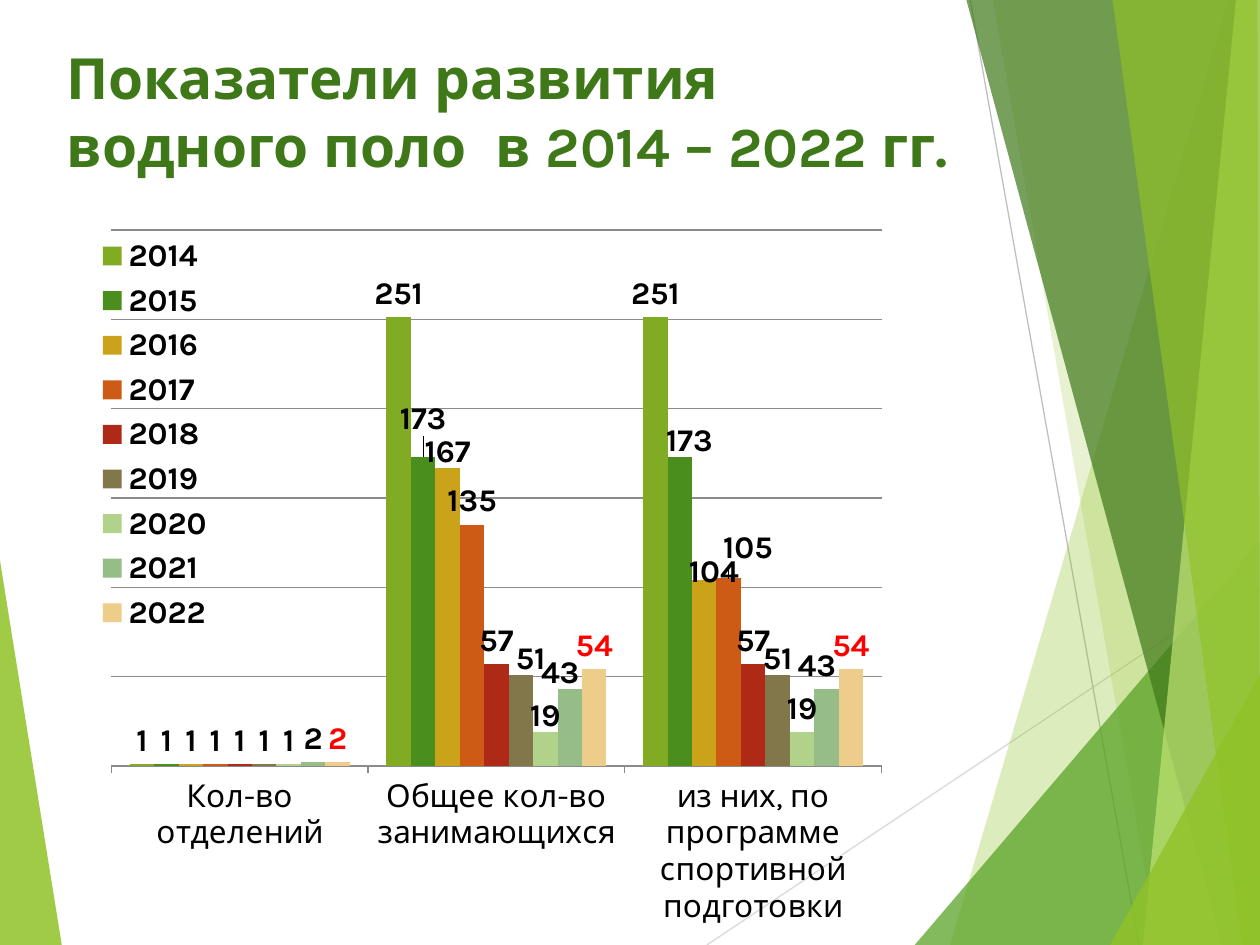
"""Build the water polo slide with its clustered column chart."""
from typing import NamedTuple

from lxml.etree import SubElement
from pptx import Presentation
from pptx.chart.chart import Chart
from pptx.chart.data import CategoryChartData
from pptx.dml.color import RGBColor
from pptx.enum.chart import (XL_CHART_TYPE, XL_LABEL_POSITION, XL_LEGEND_POSITION,
                             XL_TICK_LABEL_POSITION, XL_TICK_MARK)
from pptx.enum.shapes import MSO_CONNECTOR
from pptx.enum.text import MSO_ANCHOR
from pptx.oxml.ns import qn
from pptx.slide import Slide
from pptx.util import Inches, Pt

FONT = "Karla"
BLACK = RGBColor(0x00, 0x00, 0x00)
RED = RGBColor(0xFF, 0x00, 0x00)
GRAY = RGBColor(0x8B, 0x8B, 0x8B)
SILVER = RGBColor(0xBF, 0xBF, 0xBF)
PALE = RGBColor(0xD9, 0xD9, 0xD9)
LIME = RGBColor(0x90, 0xC2, 0x26)
GREEN = RGBColor(0x54, 0xA0, 0x21)
DARK = RGBColor(0x3F, 0x78, 0x19)
LIGHT = RGBColor(0xC0, 0xE4, 0x74)


class Facet(NamedTuple):
    color: RGBColor
    alpha: int
    points: list[tuple[float, float]]


class Ray(NamedTuple):
    color: RGBColor
    start: tuple[float, float]
    end: tuple[float, float]


class Year(NamedTuple):
    name: str
    values: tuple[int, int, int]
    fill: RGBColor
    shifts: dict[int, tuple[float, float]] = {}
    ink: RGBColor = BLACK


LEFT = Facet(LIME, 85, [(0, 4.45), (0.49, 7.5), (0, 7.5)])
RAYS = [
    Ray(PALE, (5.61, 7.5), (10, 4.57)),
    Ray(SILVER, (7.7, 0), (9.04, 7.5)),
]
FACETS = [
    Facet(LIME, 30, [(9.75, 0), (7.54, 7.5), (10, 7.5), (10, 0)]),
    Facet(LIME, 20, [(7.88, 0), (9.19, 7.5), (10, 7.5), (10, 0)]),
    Facet(GREEN, 72, [(7.26, 7.5), (10, 4.29), (10, 7.5)]),
    Facet(DARK, 70, [(7.67, 0), (9.7, 7.5), (10, 7.5), (10, 0)]),
    Facet(LIGHT, 70, [(9.81, 0), (9.07, 7.5), (10, 7.5), (10, 0)]),
    Facet(LIME, 65, [(8.83, 0), (9.86, 7.5), (10, 7.5), (9.98, 0)]),
    Facet(LIME, 80, [(8.81, 7.5), (10, 5.35), (10, 7.5)]),
]
GROUPS = ["Кол-во отделений", "Общее кол-во занимающихся",
          "из них, по программе спортивной подготовки"]
YEARS = [
    Year("2014", (1, 251, 251), RGBColor(0x80, 0xAB, 0x22)),
    Year("2015", (1, 173, 173), RGBColor(0x4A, 0x8E, 0x1D),
         {1: (0, -0.02), 2: (0.01, 0.01)}),
    Year("2016", (1, 167, 104), RGBColor(0xCB, 0xA3, 0x1A),
         {1: (0, 0.01), 2: (0.01, 0.02)}),
    Year("2017", (1, 135, 105), RGBColor(0xCD, 0x5B, 0x15),
         {1: (0, 0), 2: (0.02, -0.01)}),
    Year("2018", (1, 57, 57), RGBColor(0xAE, 0x2A, 0x17)),
    Year("2019", (1, 51, 51), RGBColor(0x81, 0x77, 0x4B),
         {1: (0.01, 0.01), 2: (0, 0.01)}),
    Year("2020", (1, 19, 19), RGBColor(0xB1, 0xD2, 0x8A), {1: (0, 0.01)}),
    Year("2021", (2, 43, 43), RGBColor(0x96, 0xBD, 0x87),
         {1: (-0.01, 0.01), 2: (-0.01, 0)}),
    Year("2022", (2, 54, 54), RGBColor(0xED, 0xCD, 0x89), ink=RED),
]


def draw_facet(slide: Slide, facet: Facet) -> None:
    points = [(Inches(x), Inches(y)) for x, y in facet.points]
    pen = slide.shapes.build_freeform(*points[0])
    pen.add_line_segments(points[1:])
    shape = pen.convert_to_shape()
    shape.shadow.inherit = False
    shape.fill.solid()
    shape.fill.fore_color.rgb = facet.color
    shape.line.fill.background()
    tint = shape.element.spPr.find(qn("a:solidFill"))[0]
    SubElement(tint, qn("a:alpha"), val=str(facet.alpha * 1000))


def draw_ray(slide: Slide, ray: Ray) -> None:
    ends = [Inches(n) for n in ray.start + ray.end]
    line = slide.shapes.add_connector(MSO_CONNECTOR.STRAIGHT, *ends)
    line.line.color.rgb = ray.color
    line.line.width = Pt(0.75)
    SubElement(line.element.spPr, qn("a:effectLst"))


def draw_title(slide: Slide) -> None:
    box = slide.shapes.add_textbox(Inches(0.43), Inches(0.29), Inches(7.32), Inches(1.44))
    frame = box.text_frame
    frame.word_wrap = True
    frame.vertical_anchor = MSO_ANCHOR.TOP
    frame.text = "Показатели развития \vводного поло  в 2014 – 2022 гг."
    for run in frame.paragraphs[0].runs:
        set_font(run.font, 32.4, DARK, True)


def set_font(font, size: float, color: RGBColor, bold: bool) -> None:
    font.name = FONT
    font.size = Pt(size)
    font.bold = bold
    font.color.rgb = color


def place(node, after: str, **parts: object) -> None:
    for old in node.findall(qn("c:layout")):
        node.remove(old)
    layout = SubElement(node, qn("c:layout"))
    manual = SubElement(layout, qn("c:manualLayout"))
    for tag, value in parts.items():
        SubElement(manual, qn(f"c:{tag}"), val=str(value))
    if after:
        node.find(qn(after)).addnext(layout)
    else:
        node.insert(0, layout)


def style_year(series, year: Year) -> None:
    series.format.fill.solid()
    series.format.fill.fore_color.rgb = year.fill
    labels = series.data_labels
    labels.show_value = True
    labels.position = XL_LABEL_POSITION.OUTSIDE_END
    set_font(labels.font, 18, year.ink, True)
    for index, (x, y) in year.shifts.items():
        label = series.points[index].data_label
        set_font(label.font, 18, year.ink, True)
        label.position = XL_LABEL_POSITION.OUTSIDE_END
    for node in labels._element.findall(qn("c:dLbl")):
        x, y = year.shifts[int(node.find(qn("c:idx")).get("val"))]
        place(node, "c:idx", x=x, y=y)


def style_axes(chart: Chart) -> None:
    groups = chart.category_axis
    groups.major_tick_mark = XL_TICK_MARK.OUTSIDE
    groups.tick_label_position = XL_TICK_LABEL_POSITION.LOW
    groups.format.line.color.rgb = GRAY
    set_font(groups.tick_labels.font, 18, BLACK, False)
    scale = chart.value_axis
    scale.minimum_scale, scale.maximum_scale, scale.major_unit = 0, 300, 50
    scale.has_major_gridlines = True
    scale.major_gridlines.format.line.color.rgb = GRAY
    scale.visible = False


def draw_chart(slide: Slide) -> None:
    data = CategoryChartData()
    data.categories = GROUPS
    for year in YEARS:
        data.add_series(year.name, year.values)
    frame = slide.shapes.add_chart(XL_CHART_TYPE.COLUMN_CLUSTERED, Inches(0.35),
                                   Inches(1.47), Inches(7.64), Inches(5.91), data)
    chart = frame.chart
    chart.has_title = False
    set_font(chart.font, 18, BLACK, False)
    style_axes(chart)
    plot = chart.plots[0]
    plot.gap_width = 150
    plot.overlap = 0
    plot.vary_by_categories = False
    for series, year in zip(plot.series, YEARS):
        style_year(series, year)
    chart.has_legend = True
    legend = chart.legend
    legend.position = XL_LEGEND_POSITION.RIGHT
    legend.include_in_layout = False
    set_font(legend.font, 18, BLACK, True)
    place(legend._element, "c:legendPos", xMode="edge", yMode="edge",
          x=0.05, y=0.06, w=0.13, h=0.55)
    area = chart._chartSpace.chart.plotArea
    place(area, "", layoutTarget="inner", xMode="edge", yMode="edge",
          x=0.07, y=0.06, w=0.8, h=0.72)


def main() -> None:
    deck = Presentation()
    deck.slide_width, deck.slide_height = Inches(10), Inches(7.5)
    slide = deck.slides.add_slide(deck.slide_layouts[6])
    draw_facet(slide, LEFT)
    for ray in RAYS:
        draw_ray(slide, ray)
    for facet in FACETS:
        draw_facet(slide, facet)
    draw_title(slide)
    draw_chart(slide)
    deck.save("out.pptx")


if __name__ == "__main__":
    main()
